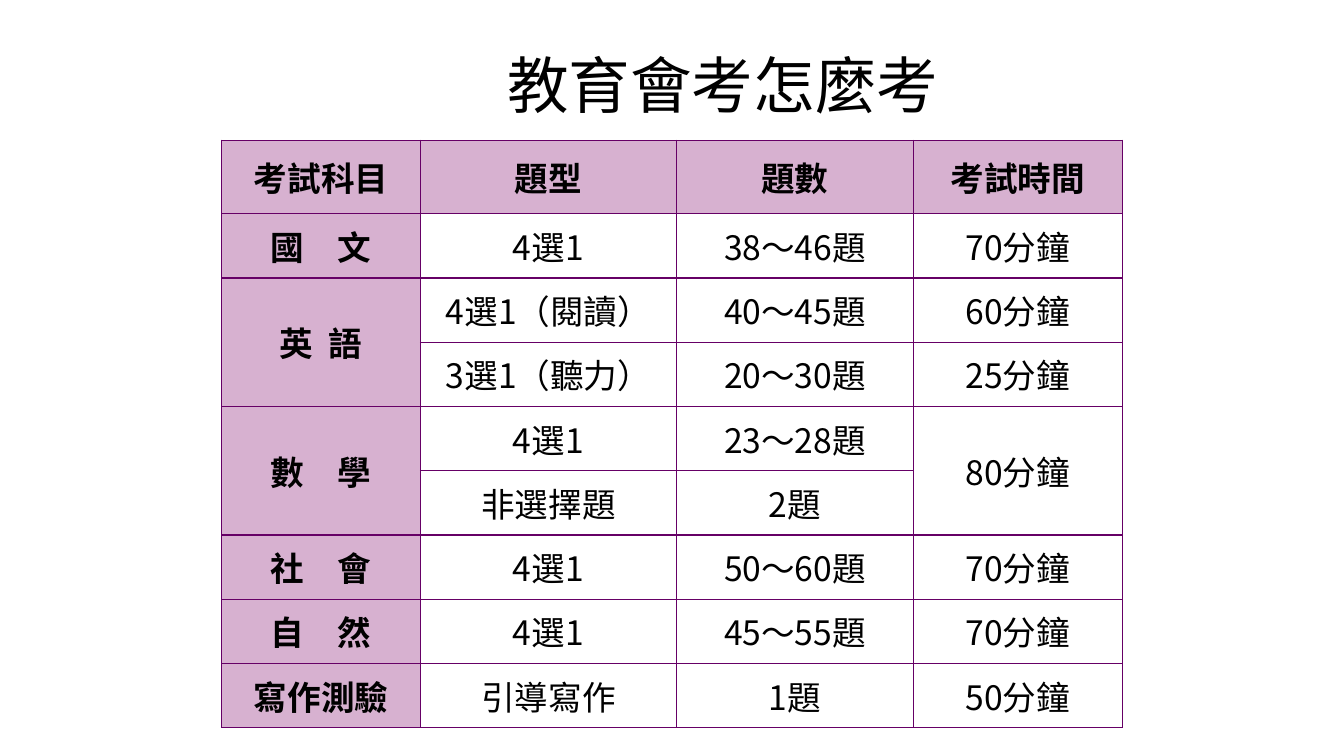
from lxml.etree import SubElement
from pptx import Presentation
from pptx.dml.color import RGBColor
from pptx.enum.text import MSO_ANCHOR, MSO_AUTO_SIZE, PP_ALIGN
from pptx.oxml.ns import qn
from pptx.util import Inches, Pt

COLORS = {"text": "000000", "border": "660066", "heading": "D7B1D0"}
FONT = "Noto Sans CJK SC"
TITLE_ONLY = 5

HEADINGS = ["考試科目", "題型", "題數", "考試時間"]
# None continues the cell above it.
EXAMS = [
    ["國　文", "4選1", "38～46題", "70分鐘"],
    ["英  語", "4選1（閱讀）", "40～45題", "60分鐘"],
    [None, "3選1（聽力）", "20～30題", "25分鐘"],
    ["數　學", "4選1", "23～28題", "80分鐘"],
    [None, "非選擇題", "2題", None],
    ["社　會", "4選1", "50～60題", "70分鐘"],
    ["自　然", "4選1", "45～55題", "70分鐘"],
    ["寫作測驗", "引導寫作", "1題", "50分鐘"],
]
COLUMN_WIDTHS = [1.97, 2.54, 2.35, 2.07]
TABLE_HEIGHT = 5.83
HEADING_HEIGHT = 0.73


class ExamPage:
    """Holds the current slide and the shared text and table style."""

    def __init__(self, deck):
        self.page = deck.slides.add_slide(deck.slide_layouts[TITLE_ONLY])

    def add_text(self, frame, text, size, bold=False):
        para = frame.paragraphs[0]
        para.alignment = PP_ALIGN.CENTER
        span = para.add_run()
        span.text = text
        span.font.size = Pt(size)
        span.font.bold = bold
        span.font.color.rgb = RGBColor.from_string(COLORS["text"])
        span.font.name = FONT
        SubElement(span.font._element, qn("a:ea"), typeface=FONT)

    def title(self, text, left, top, width, height):
        box = self.page.shapes.title
        box.left, box.top = Inches(left), Inches(top)
        box.width, box.height = Inches(width), Inches(height)
        frame = box.text_frame
        frame.word_wrap = True
        frame.auto_size = MSO_AUTO_SIZE.NONE
        frame.vertical_anchor = MSO_ANCHOR.MIDDLE
        self.add_text(frame, text, 44)

    def border(self, cell):
        properties = cell._tc.get_or_add_tcPr()
        for side in ("lnL", "lnR", "lnT", "lnB"):
            line = SubElement(properties, qn(f"a:{side}"), w=str(Pt(1)))
            fill = SubElement(line, qn("a:solidFill"))
            SubElement(fill, qn("a:srgbClr"), val=COLORS["border"])

    def style_cell(self, cell, is_heading):
        cell.vertical_anchor = MSO_ANCHOR.MIDDLE
        cell.margin_left = cell.margin_right = Inches(0.02)
        cell.margin_top = cell.margin_bottom = Inches(0.02)
        self.border(cell)
        if is_heading:
            cell.fill.solid()
            cell.fill.fore_color.rgb = RGBColor.from_string(COLORS["heading"])
        else:
            cell.fill.background()

    def table(self, rows, left, top):
        """Draw the rows, merging each None into the cell above."""
        table = self.page.shapes.add_table(
            len(rows), len(COLUMN_WIDTHS), Inches(left), Inches(top),
            Inches(sum(COLUMN_WIDTHS)), Inches(TABLE_HEIGHT)).table
        table.first_row = table.horz_banding = False
        for column, width in zip(table.columns, COLUMN_WIDTHS):
            column.width = Inches(width)
        row_height = (TABLE_HEIGHT - HEADING_HEIGHT) / (len(rows) - 1)
        for index, row in enumerate(rows):
            table.rows[index].height = Inches(row_height if index else HEADING_HEIGHT)
            for position, text in enumerate(row):
                cell = table.cell(index, position)
                is_heading = index == 0 or position == 0
                self.style_cell(cell, is_heading)
                if text is None:
                    table.cell(index - 1, position).merge(cell)
                else:
                    self.add_text(cell.text_frame, text, 24, is_heading)


def main():
    deck = Presentation()
    deck.slide_width, deck.slide_height = Inches(13.33), Inches(7.5)
    exam_page = ExamPage(deck)
    exam_page.title("教育會考怎麼考", 2.67, 0.21, 9, 1.25)
    exam_page.table([HEADINGS] + EXAMS, 2.2, 1.39)
    deck.save("out.pptx")


if __name__ == "__main__":
    main()
